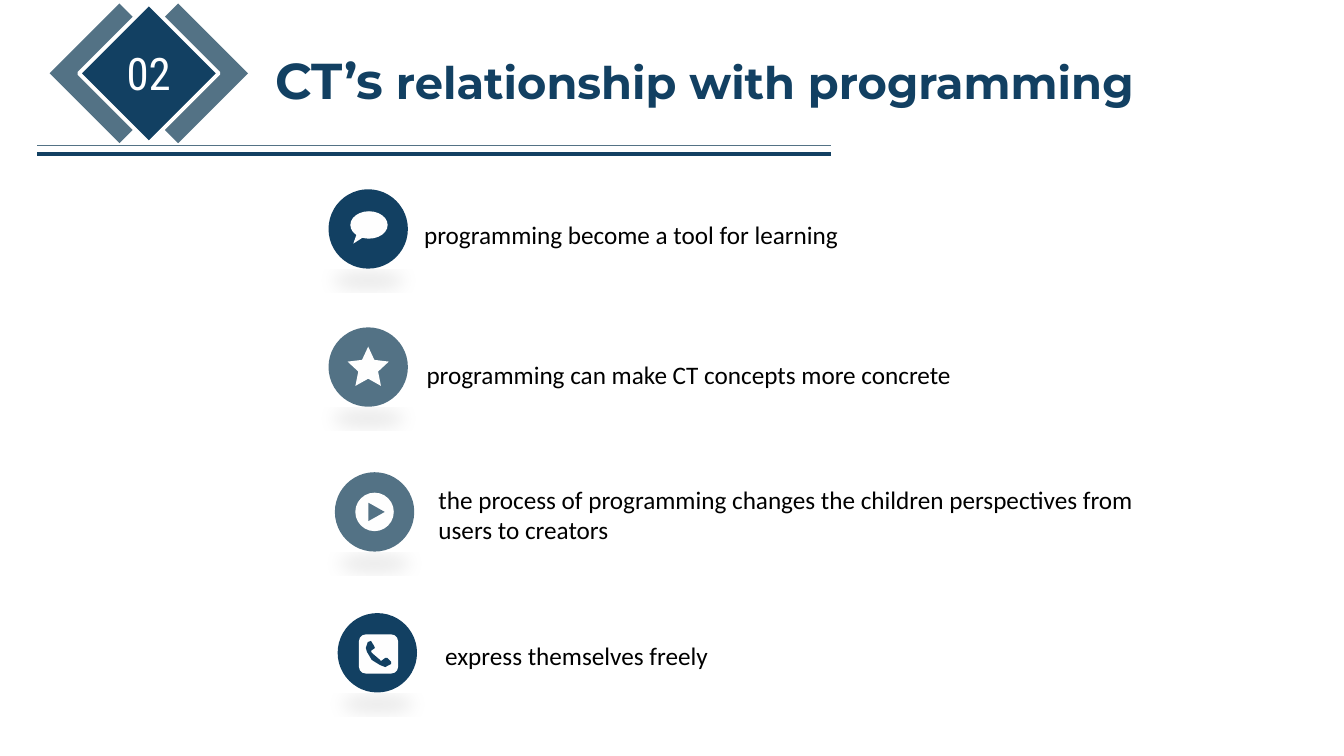
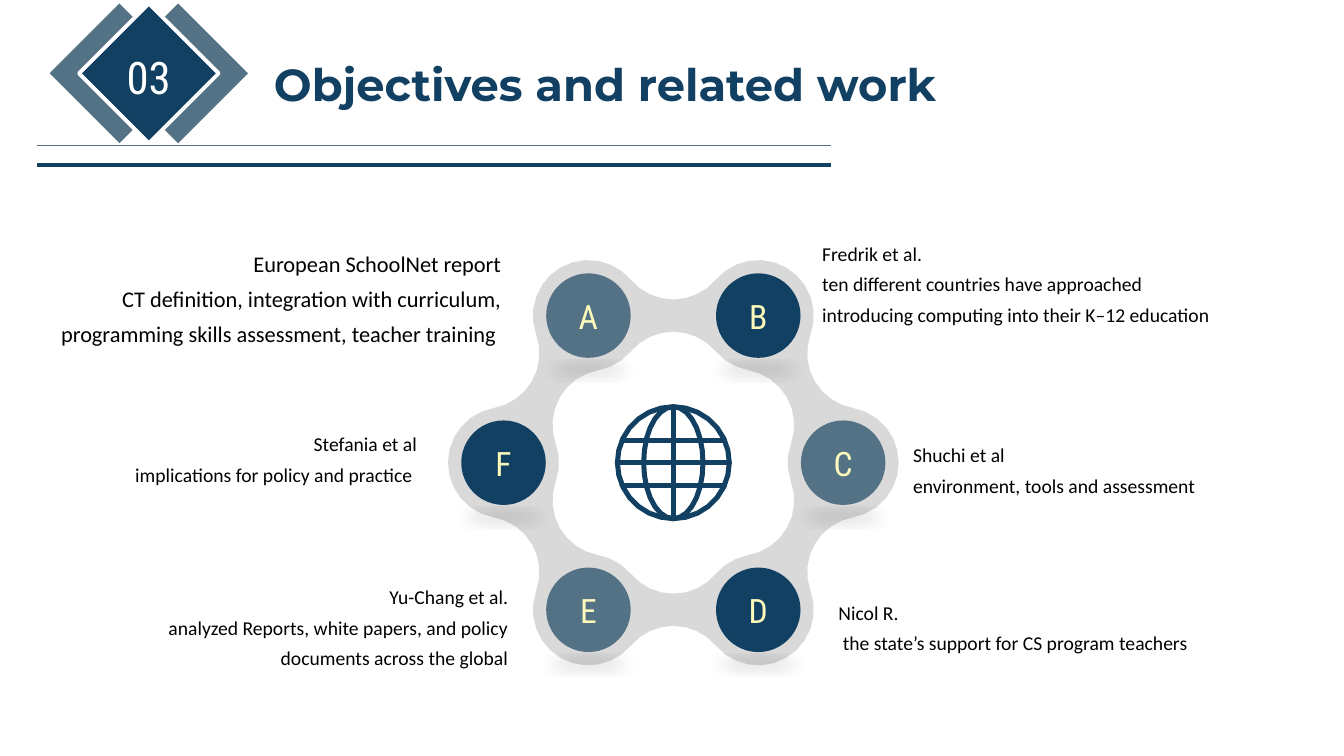
"""Build two slides on computational thinking and programming."""
from dataclasses import dataclass
from math import atan2, cos, degrees, pi, radians, sin, sqrt
from typing import Callable, Optional

from lxml import etree
from pptx import Presentation
from pptx.dml.color import RGBColor
from pptx.enum.shapes import MSO_CONNECTOR, MSO_SHAPE
from pptx.enum.text import MSO_ANCHOR, PP_ALIGN
from pptx.oxml.ns import qn
from pptx.util import Cm, Pt

RECTANGLE, OVAL = MSO_SHAPE.RECTANGLE, MSO_SHAPE.OVAL
ROUNDED, STAR = MSO_SHAPE.ROUNDED_RECTANGLE, MSO_SHAPE.STAR_5_POINT
BUBBLE, TRIANGLE = MSO_SHAPE.OVAL_CALLOUT, MSO_SHAPE.ISOSCELES_TRIANGLE
STRAIGHT = MSO_CONNECTOR.STRAIGHT
LEFT, CENTER, RIGHT = PP_ALIGN.LEFT, PP_ALIGN.CENTER, PP_ALIGN.RIGHT
TOP, MIDDLE = MSO_ANCHOR.TOP, MSO_ANCHOR.MIDDLE


@dataclass(frozen=True)
class Theme:
    """Colours, fonts and type sizes of the presentation."""
    navy: str = "124062"
    steel: str = "537285"
    grey: str = "D9D9D9"
    cream: str = "FEFABC"
    icon: str = "FEFEFE"
    white: str = "FFFFFF"
    black: str = "000000"
    title_font: str = "Montserrat"
    label_font: str = "Roboto Condensed"
    body_font: str = "Calibri"
    title_size: int = 32
    lead_size: int = 36
    badge_size: int = 24
    bullet_size: int = 18
    report_size: int = 16
    note_size: int = 14


THEME = Theme()


@dataclass(frozen=True)
class Header:
    """Number, title and positions that differ between headers."""
    number: str
    number_top: float
    title: list[tuple[str, int]]
    title_left: float
    title_top: float
    rule_top: float


@dataclass(frozen=True)
class Bullet:
    """A disc with an icon and its statement."""
    text: str
    fill: str
    disc: tuple[float, float]
    box: tuple[float, float, float, float]
    icon: Callable


@dataclass(frozen=True)
class Study:
    """A lettered node of the ring and its note."""
    letter: str
    lines: tuple[str, str]
    box: tuple[float, float, float, float]
    align: PP_ALIGN = LEFT
    size: int = THEME.note_size


def write_text(paragraph, text: str, *, size: int, color: str = THEME.black,
               font: str = THEME.body_font, bold: bool = False,
               align: PP_ALIGN = LEFT, spacing: Optional[float] = None) -> None:
    """Append a formatted run to a paragraph."""
    paragraph.alignment = align
    if spacing:
        paragraph.line_spacing = spacing
    run = paragraph.add_run()
    run.text = text
    run.font.name, run.font.size, run.font.bold = font, Pt(size), bold
    run.font.color.rgb = RGBColor.from_string(color)


def add_text_box(slide, box: tuple[float, float, float, float], lines: tuple[str, ...], **style) -> None:
    """Add a wrapping text box with one paragraph per line."""
    frame = slide.shapes.add_textbox(*map(Cm, box)).text_frame
    frame.word_wrap = True
    for index, line in enumerate(lines):
        paragraph = frame.add_paragraph() if index else frame.paragraphs[0]
        write_text(paragraph, line, **style)


def paint(shape, fill: Optional[str], line: Optional[str] = None, width: float = 1) -> None:
    """Set the fill and outline of a shape and drop its shadow."""
    shape.shadow.inherit = False
    if fill:
        shape.fill.solid()
        shape.fill.fore_color.rgb = RGBColor.from_string(fill)
    else:
        shape.fill.background()
    if line:
        shape.line.color.rgb = RGBColor.from_string(line)
        shape.line.width = Pt(width)
    else:
        shape.line.fill.background()


def add_centered(slide, kind: MSO_SHAPE, x: float, y: float, width: float, height: float,
                 fill: Optional[str], line: Optional[str] = None, weight: float = 1):
    """Add a preset shape around a centre point."""
    shape = slide.shapes.add_shape(kind, Cm(x - width / 2), Cm(y - height / 2), Cm(width), Cm(height))
    paint(shape, fill, line, weight)
    return shape


def add_line(slide, start: tuple[float, float], end: tuple[float, float], color: str, width: float) -> None:
    """Add a straight line without a shadow."""
    line = slide.shapes.add_connector(STRAIGHT, *map(Cm, start + end))
    line.line.color.rgb = RGBColor.from_string(color)
    line.line.width = Pt(width)
    etree.SubElement(line._element.spPr, qn("a:effectLst"))


def add_outline(slide, contours: list[list[tuple[float, float]]], fill: Optional[str],
                line: Optional[str] = None, weight: float = 1) -> None:
    """Add one freeform made of closed contours."""
    builder = None
    for contour in contours:
        points = [(Cm(x), Cm(y)) for x, y in contour]
        if builder is None:
            builder = slide.shapes.build_freeform(*points[0])
        else:
            builder.move_to(*points[0])
        builder.add_line_segments(points[1:], close=True)
    paint(builder.convert_to_shape(), fill, line, weight)


def add_disc(slide, x: float, y: float, diameter: float, fill: str, blur: float):
    """Add a disc that casts a flattened shadow below itself."""
    disc = add_centered(slide, OVAL, x, y, diameter, diameter, fill)
    effects = disc._element.spPr.find(qn("a:effectLst"))
    shadow = etree.SubElement(effects, qn("a:outerShdw"), blurRad=str(Pt(blur)), dist=str(Pt(3)),
                              dir="5400000", sx="90000", sy="-19000", algn="b", rotWithShape="0")
    color = etree.SubElement(shadow, qn("a:srgbClr"), val=THEME.black)
    etree.SubElement(color, qn("a:alpha"), val="10000")
    return disc


def add_header_slide(presentation, header: Header):
    """Add a title-only slide with the numbered diamond header."""
    slide = presentation.slides.add_slide(presentation.slide_layouts[5])
    title = slide.shapes.title
    title.left, title.top = Cm(header.title_left), Cm(header.title_top)
    title.width, title.height = Cm(23.11), Cm(1.8)
    title.text_frame.word_wrap = True
    title.text_frame.vertical_anchor = TOP
    for text, size in header.title:
        write_text(title.text_frame.paragraphs[0], text, size=size, color=THEME.navy,
                   font=THEME.title_font, bold=True)
    for top, color, width in ((3.66, THEME.steel, 1), (header.rule_top, THEME.navy, 3)):
        add_line(slide, (0.94, top), (20.93, top), color, width)
    center = 3.75
    for shift, fill, line in ((0.74, THEME.steel, None), (-0.74, THEME.steel, None),
                              (0, THEME.navy, THEME.white)):
        diamond = add_centered(slide, RECTANGLE, center + shift, 1.85, 2.49, 2.49, fill, line, 2.75)
        diamond.rotation = 45
    add_text_box(slide, (center - 1.25, header.number_top, 2.5, 1.63), (header.number,),
                 size=THEME.title_size, color=THEME.white, font=THEME.label_font, align=CENTER)
    return slide


def draw_bubble(slide, x: float, y: float, _: str) -> None:
    """Draw a speech bubble icon."""
    bubble = add_centered(slide, BUBBLE, x + 0.02, y - 0.1, 0.94, 0.69, THEME.icon)
    bubble.adjustments[0], bubble.adjustments[1] = -0.42, 0.68


def draw_star(slide, x: float, y: float, _: str) -> None:
    """Draw a star icon."""
    star = add_centered(slide, STAR, x, y - 0.02, 1.04, 0.99, THEME.icon)
    star.adjustments[0] = 0.24


def draw_play(slide, x: float, y: float, back: str) -> None:
    """Draw a play button icon."""
    add_centered(slide, OVAL, x, y, 0.97, 0.97, THEME.icon)
    add_centered(slide, TRIANGLE, x + 0.05, y, 0.46, 0.41, back).rotation = 90


def draw_phone(slide, x: float, y: float, back: str) -> None:
    """Draw a handset on a rounded square."""
    x, y = x + 0.03, y + 0.03
    add_centered(slide, ROUNDED, x, y, 0.99, 0.99, THEME.icon).adjustments[0] = 0.18
    handset = ((0.32, 0.2), (0.22, 0.1), (0.17, 0.1), (0.06, 0.18), (0.04, 0.15), (-0.17, -0.03),
               (-0.19, -0.08), (-0.09, -0.15), (-0.11, -0.2), (-0.19, -0.33), (-0.27, -0.3),
               (-0.32, -0.15), (-0.29, -0.05), (-0.17, 0.15), (0.04, 0.28), (0.17, 0.33), (0.32, 0.25))
    add_outline(slide, [[(x + across, y + down) for across, down in handset]], back)


def polar(x: float, y: float, radius: float, angle: float) -> tuple[float, float]:
    """Return the point at an angle in degrees around a centre."""
    return x + radius * cos(radians(angle)), y + radius * sin(radians(angle))


def arc(center: tuple[float, float], radius: float, start: float, end: float) -> list[tuple[float, float]]:
    """Return points along a circular arc, without its last point."""
    steps = round(abs(end - start) / 13)
    return [polar(*center, radius, start + (end - start) * step / steps) for step in range(steps)]


def ring_contour(x: float, y: float, orbit: float, radius: float, side: int) -> list[tuple[float, float]]:
    """Return the outer (side 1) or inner (side -1) contour of six joined nodes."""
    reach = orbit * cos(pi / 6) + side * sqrt(4 * radius ** 2 - orbit ** 2 / 4)
    bend = degrees(atan2(reach * sin(pi / 6), reach * cos(pi / 6) - orbit))
    turn = 0 if side > 0 else 360
    contour = []
    for angle in range(0, 360, 60):
        contour += arc(polar(x, y, orbit, angle), radius, angle + turn - bend, angle + bend)
        contour += arc(polar(x, y, reach, angle + 30), radius,
                       angle + bend + 180 - turn, angle + 240 - bend)
    return contour


def draw_globe(slide, x: float, y: float) -> None:
    """Draw a wireframe globe as one outline."""
    radius, gap = 1.41, 0.57
    rim = arc((x, y), radius, 0, 360)
    meridian = [(x + (across - x) * 0.53, down) for across, down in rim]
    wires = [rim, meridian, [(x, y - radius), (x, y + radius)]]
    for shift in (-gap, 0, gap):
        half = sqrt(radius ** 2 - shift ** 2)
        wires.append([(x - half, y + shift), (x + half, y + shift)])
    add_outline(slide, wires, None, THEME.navy, 3.6)


def build_programming(presentation) -> None:
    """Build the slide on programming."""
    slide = add_header_slide(presentation, Header(
        "02", 1.04, [("CT’s", THEME.lead_size), (" relationship with programming", THEME.title_size)],
        6.68, 1.12, 3.89))
    bullets = (
        Bullet("programming become a tool for learning", THEME.navy,
               (9.28, 5.77), (10.44, 5.41, 14.07, 1.02), draw_bubble),
        Bullet("programming can make CT concepts more concrete", THEME.steel,
               (9.28, 9.25), (10.5, 8.92, 14.07, 1.02), draw_star),
        Bullet("the process of programming changes the children perspectives from users to creators",
               THEME.steel, (9.44, 12.9), (10.8, 12.08, 18.67, 1.8), draw_play),
        Bullet("express themselves freely", THEME.navy,
               (9.51, 16.45), (10.97, 16, 7.87, 1.02), draw_phone),
    )
    for bullet in bullets:
        add_disc(slide, *bullet.disc, 2, bullet.fill, 13)
        bullet.icon(slide, *bullet.disc, bullet.fill)
        add_text_box(slide, bullet.box, (bullet.text,), size=THEME.bullet_size)


def build_related_work(presentation) -> None:
    """Build the slide on related work."""
    slide = add_header_slide(presentation, Header(
        "03", 1.12, [("Objectives and related work", THEME.title_size)], 6.65, 1.3, 4.15))
    studies = (
        Study("A", ("European SchoolNet report",
                    "CT definition, integration with curriculum, programming skills assessment, teacher training "),
              (1.25, 5.98, 11.63, 3.9), RIGHT, THEME.report_size),
        Study("B", ("Fredrik et al.",
                    "ten different countries have approached introducing computing into their K–12 education"),
              (20.47, 5.79, 10.44, 2.59)),
        Study("C", ("Shuchi et al", "environment, tools and assessment"), (22.76, 10.87, 10.24, 1.8)),
        Study("D", ("Nicol R.", " the state’s support for CS program teachers"), (20.88, 14.83, 9.63, 1.8)),
        Study("E", ("Yu-Chang et al.",
                    "analyzed Reports, white papers, and policy documents across the global"),
              (3.43, 14.44, 9.63, 2.59), RIGHT),
        Study("F", ("Stefania et al", "implications for policy and practice "),
              (1.54, 10.59, 9.22, 1.8), RIGHT),
    )
    x, y, orbit = 16.97, 11.66, 4.28
    add_outline(slide, [ring_contour(x, y, orbit, 1.4, side) for side in (1, -1)], THEME.grey)
    for index, study in enumerate(studies):
        fill = THEME.navy if index % 2 else THEME.steel
        badge = add_disc(slide, *polar(x, y, orbit, 60 * index - 120), 2.13, fill, 11)
        badge.text_frame.vertical_anchor = MIDDLE
        write_text(badge.text_frame.paragraphs[0], study.letter, size=THEME.badge_size,
                   color=THEME.cream, font=THEME.label_font, align=CENTER)
        add_text_box(slide, study.box, study.lines, size=study.size, align=study.align, spacing=1.3)
    draw_globe(slide, x, y)


def main() -> None:
    """Build and save the presentation."""
    presentation = Presentation()
    presentation.slide_width, presentation.slide_height = Cm(33.87), Cm(19.05)
    build_programming(presentation)
    build_related_work(presentation)
    presentation.save("out.pptx")


if __name__ == "__main__":
    main()
